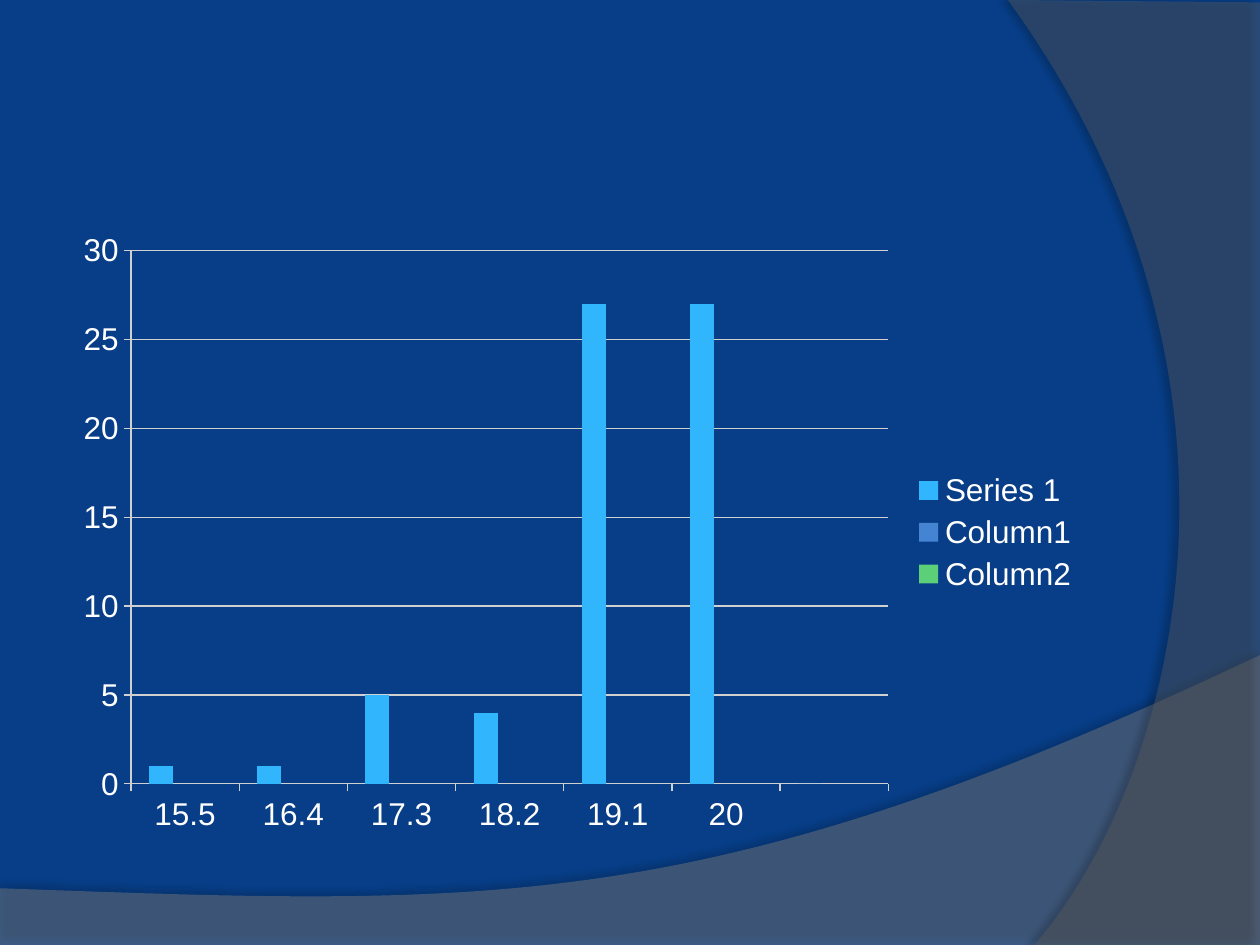
from lxml import etree
from pptx import Presentation
from pptx.chart.data import CategoryChartData
from pptx.dml.color import RGBColor
from pptx.enum.chart import XL_CHART_TYPE as ChartType, XL_LEGEND_POSITION as LegendPos
from pptx.enum.chart import XL_TICK_MARK as Tick
from pptx.oxml.ns import qn
from pptx.util import Pt

COLORS = {
    "background": "073E87", "wave": "7F7F7F", "arc": "5E5E5E",
    "shadow": "000000", "text": "FFFFFF", "lines": "D0D0D0",
}

# Content
CATEGORIES = ["15.5", "16.4", "17.3", "18.2", "19.1", "20", ""]
SERIES = [
    ("Series 1", [1, 1, 5, 4, 27, 27, 0], "31B6FD"),
    ("Column1", [None] * len(CATEGORIES), "4584D3"),
    ("Column2", [None] * len(CATEGORIES), "5BD078"),
]
CHART_BOX = (36, 126, 588, 356.4)  # left, top, width, height

# Background sweeps: a curve (start, two controls, end), then straight corners
SWEEPS = [
    {"color": "wave", "opacity": 45,
     "curve": [(720, 374.4), (402.5, 524.9), (281.5, 517.7), (0, 507.6)],
     "corners": [(0, 540), (720, 540)],
     "shadow": {"opacity": 35, "blur": 4, "distance": 3.5, "angle": 270}},
    {"color": "arc", "opacity": 40,
     "curve": [(591, 540), (673.2, 445.7), (733, 216), (576, 0)],
     "corners": [(720, 1.4), (720, 540)],
     "shadow": {"opacity": 45, "blur": 4, "distance": 4, "angle": 180}},
]
CURVE_STEPS = 60


def rgb(name):
    return RGBColor.from_string(COLORS.get(name, name))


def curve_points(curve):
    for step in range(CURVE_STEPS + 1):
        t = step / CURVE_STEPS
        weights = ((1 - t) ** 3, 3 * t * (1 - t) ** 2, 3 * t * t * (1 - t), t ** 3)
        yield tuple(Pt(sum(w * p[axis] for w, p in zip(weights, curve)))
                    for axis in (0, 1))


def set_opacity(color_node, percent):
    etree.SubElement(color_node, qn("a:alpha"), val=str(percent * 1000))


def add_shadow(shape, opacity, blur, distance, angle):
    shape.shadow.inherit = False
    effects = shape._element.spPr.find(qn("a:effectLst"))
    outer = etree.SubElement(
        effects, qn("a:outerShdw"), blurRad=str(Pt(blur)), dist=str(Pt(distance)),
        dir=str(angle * 60000), algn="ctr", rotWithShape="0")
    color_node = etree.SubElement(outer, qn("a:srgbClr"), val=COLORS["shadow"])
    set_opacity(color_node, opacity)


def add_sweep(slide, sweep):
    first, *rest = curve_points(sweep["curve"])
    outline = slide.shapes.build_freeform(*first)
    corners = [(Pt(x), Pt(y)) for x, y in sweep["corners"]]
    outline.add_line_segments(rest + corners, close=True)
    shape = outline.convert_to_shape()
    shape.fill.solid()
    shape.fill.fore_color.rgb = rgb(sweep["color"])
    set_opacity(shape._element.spPr.find(f".//{qn('a:srgbClr')}"), sweep["opacity"])
    shape.line.fill.background()
    add_shadow(shape, **sweep["shadow"])


def style_line(line):
    line.color.rgb = rgb("lines")
    line.width = Pt(0.75)


def add_column_chart(slide):
    data = CategoryChartData()
    data.categories = CATEGORIES
    for name, values, _ in SERIES:
        data.add_series(name, values)
    chart = slide.shapes.add_chart(
        ChartType.COLUMN_CLUSTERED, *map(Pt, CHART_BOX), data).chart
    for attribute, value in {"name": "Arial", "size": Pt(18)}.items():
        setattr(chart.font, attribute, value)
    chart.font.color.rgb = rgb("text")
    chart.has_title = False

    # Legend
    chart.has_legend = True
    chart.legend.position = LegendPos.RIGHT
    chart.legend.include_in_layout = False

    # Columns
    plot = chart.plots[0]
    plot.gap_width = 150
    plot.vary_by_categories = False
    for series, (_, _, color) in zip(plot.series, SERIES):
        series.format.fill.solid()
        series.format.fill.fore_color.rgb = rgb(color)
        series.invert_if_negative = False

    # Axes
    for axis in (chart.category_axis, chart.value_axis):
        axis.major_tick_mark = Tick.OUTSIDE
        axis.minor_tick_mark = Tick.NONE
        style_line(axis.format.line)
    for attribute, value in {"minimum_scale": 0, "maximum_scale": 30, "major_unit": 5,
                             "has_major_gridlines": True}.items():
        setattr(chart.value_axis, attribute, value)
    style_line(chart.value_axis.major_gridlines.format.line)


def main():
    deck = Presentation()
    deck.slide_width, deck.slide_height = Pt(720), Pt(540)
    slide = deck.slides.add_slide(deck.slide_layouts[6])
    slide.background.fill.solid()
    slide.background.fill.fore_color.rgb = rgb("background")
    for sweep in SWEEPS:
        add_sweep(slide, sweep)
    add_column_chart(slide)
    deck.save("out.pptx")


if __name__ == "__main__":
    main()
